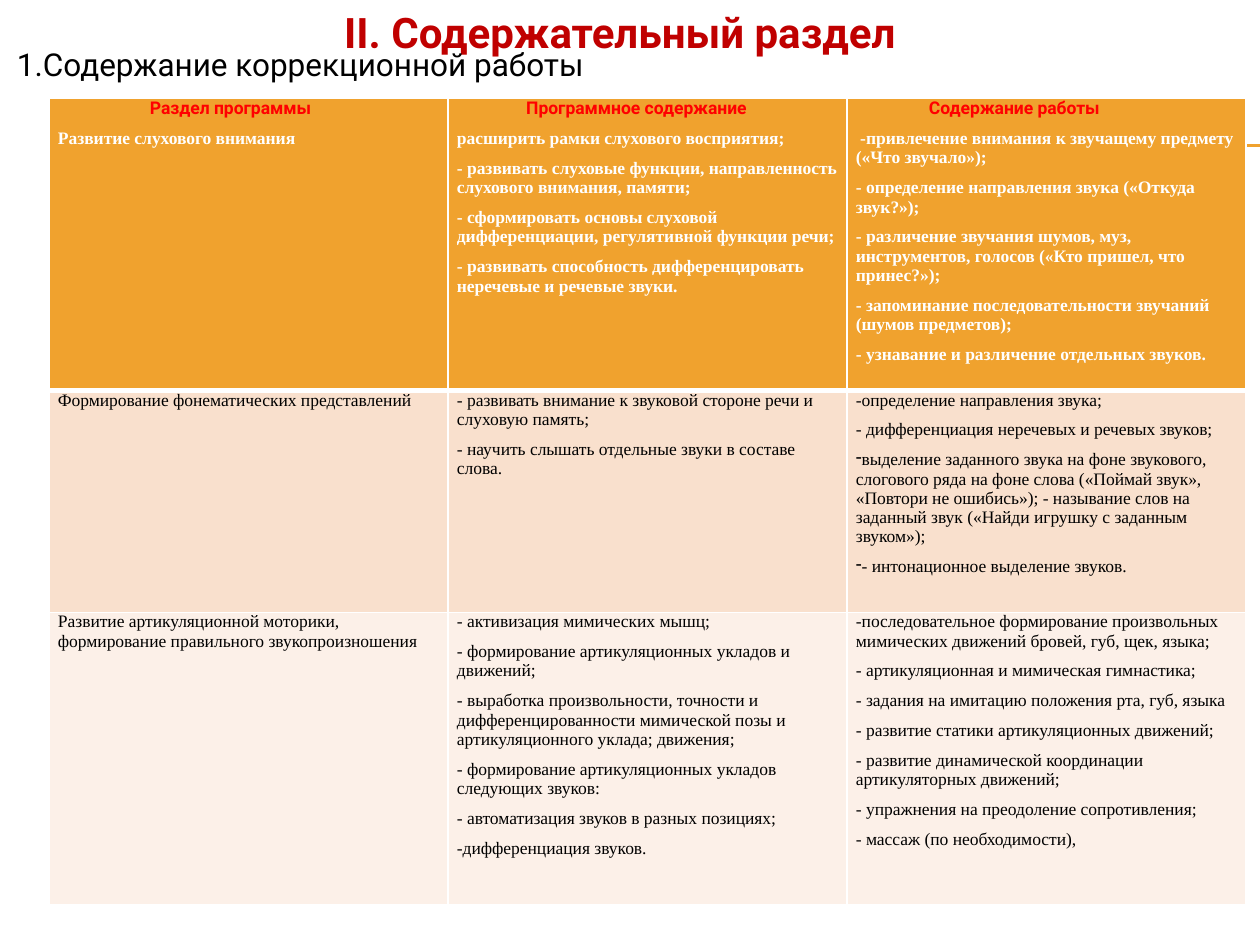
from lxml.etree import SubElement
from pptx import Presentation
from pptx.dml.color import RGBColor
from pptx.enum.text import MSO_ANCHOR, MSO_AUTO_SIZE, PP_ALIGN
from pptx.enum.shapes import MSO_CONNECTOR
from pptx.oxml.ns import qn
from pptx.util import Inches, Pt

ORANGE = RGBColor(0xF0, 0xA2, 0x2E)
PEACH = RGBColor(0xF9, 0xE0, 0xCD)
CREAM = RGBColor(0xFC, 0xF0, 0xE8)
WHITE = RGBColor(0xFF, 0xFF, 0xFF)
BLACK = RGBColor(0, 0, 0)
RED = RGBColor(0xFF, 0, 0)
DARK_RED = RGBColor(0xC0, 0, 0)
SANS, SERIF = "Roboto", "Times New Roman"

# Heading and its left indent in inches, one per column
HEADINGS = [("Раздел программы", 0.73), ("Программное содержание", 0.55),
            ("Содержание работы", 0.58)]
BULLET = "•"  # marks a paragraph that gets a dash as its list bullet

ROWS = [
    [
        ["Развитие слухового внимания"],
        ["расширить рамки слухового восприятия;",
         "- развивать слуховые функции, направленность слухового внимания, памяти;",
         "- сформировать основы слуховой дифференциации, регулятивной функции речи;",
         "- развивать способность дифференцировать неречевые и речевые звуки."],
        [" -привлечение внимания к звучащему предмету («Что звучало»);",
         "- определение направления звука («Откуда звук?»);",
         "- различение звучания шумов, муз, инструментов, голосов («Кто пришел, что принес?»);",
         "- запоминание последовательности звучаний (шумов предметов);",
         "- узнавание и различение отдельных звуков."],
    ],
    [
        ["Формирование фонематических представлений"],
        ["- развивать внимание к звуковой стороне речи и слуховую память;",
         "- научить слышать отдельные звуки в составе слова."],
        ["-определение направления звука;",
         "- дифференциация неречевых и речевых звуков;",
         BULLET + "выделение заданного звука на фоне звукового, слогового ряда на фоне слова "
         "(«Поймай звук», «Повтори не ошибись»); - называние слов на заданный звук "
         "(«Найди игрушку с заданным звуком»);",
         BULLET + "- интонационное выделение звуков."],
    ],
    [
        ["Развитие артикуляционной моторики, формирование правильного звукопроизношения"],
        ["- активизация мимических мышц;",
         "- формирование артикуляционных укладов и движений;",
         "- выработка произвольности, точности и дифференцированности мимической позы "
         "и артикуляционного уклада; движения;",
         "- формирование артикуляционных укладов следующих звуков:",
         "- автоматизация звуков в разных позициях;",
         "-дифференциация звуков."],
        ["-последовательное формирование произвольных мимических движений бровей, губ, щек, языка;",
         "- артикуляционная и мимическая гимнастика;",
         "- задания на имитацию положения рта, губ, языка",
         "- развитие статики артикуляционных движений;",
         "- развитие динамической координации артикуляторных движений;",
         "- упражнения на преодоление сопротивления;",
         "- массаж (по необходимости),"],
    ],
]
ROW_STYLES = [(2.32, ORANGE, WHITE), (1.76, PEACH, BLACK), (2.32, CREAM, BLACK)]


class SlideBuilder:
    def __init__(self, slide):
        self.s = slide

    def style(self, p, size, font, color, bold=False):
        f = p.font
        f.size, f.name, f.bold = Pt(size), font, bold
        f.color.rgb = color

    def caption(self, sp, box, text, size, color, bold=False):
        sp.left, sp.top, sp.width, sp.height = map(Inches, box)
        tf = sp.text_frame
        tf.word_wrap = True
        tf.auto_size = MSO_AUTO_SIZE.NONE
        tf.vertical_anchor = MSO_ANCHOR.TOP
        p = tf.paragraphs[0]
        p.text = text
        p.alignment = PP_ALIGN.CENTER
        self.style(p, size, SANS, color, bold)

    def title(self, box, text):
        self.caption(self.s.shapes.title, box, text, 24, DARK_RED, True)

    def subtitle(self, box, text):
        sp = self.s.shapes.add_textbox(*map(Inches, box))
        self.caption(sp, box, text, 18, BLACK)

    def rule(self, x1, x2, y):
        c = self.s.shapes.add_connector(MSO_CONNECTOR.STRAIGHT, Inches(x1), Inches(y),
                                        Inches(x2), Inches(y))
        c.line.color.rgb = ORANGE
        c.line.width = Pt(0.75)
        SubElement(c._element.spPr, qn("a:effectLst"))

    def borders(self, cell, top, bottom):
        """Draw white cell borders; must run before the cell is filled."""
        tc_pr = cell._tc.get_or_add_tcPr()
        for tag, width in (("lnL", 1), ("lnR", 1), ("lnT", top), ("lnB", bottom)):
            ln = SubElement(tc_pr, qn("a:" + tag), w=str(Pt(width)))
            fill = SubElement(ln, qn("a:solidFill"))
            SubElement(fill, qn("a:srgbClr"), val=str(WHITE))

    def paragraph(self, p, text, font, color, bold, indent=0):
        p.text = text.removeprefix(BULLET)
        p.space_after = Pt(6)
        self.style(p, 10, font, color, bold)
        p_pr = p._p.get_or_add_pPr()
        p_pr.set("marL", str(Inches(indent)))
        p_pr.set("indent", "0")
        if text.startswith(BULLET):
            bullet = p_pr.makeelement(qn("a:buChar"), {"char": "-"})
            p_pr.find(qn("a:defRPr")).addprevious(bullet)

    def cell(self, cell, texts, fill, color, heading=None, top=1):
        cell.margin_left = cell.margin_right = Inches(0.07)
        cell.margin_top = cell.margin_bottom = 0
        self.borders(cell, top, 3 if heading else 1)
        cell.fill.solid()
        cell.fill.fore_color.rgb = fill
        tf = cell.text_frame
        p = tf.paragraphs[0]
        if heading:
            text, indent = heading
            self.paragraph(p, text, SANS, RED, True, indent)
            p = tf.add_paragraph()
        for i, text in enumerate(texts):
            self.paragraph(p if i == 0 else tf.add_paragraph(), text, SERIF, color,
                           bool(heading))

    def table(self, box):
        table = self.s.shapes.add_table(len(ROWS), len(HEADINGS), *map(Inches, box)).table
        for r, (height, fill, color) in enumerate(ROW_STYLES):
            table.rows[r].height = Inches(height)
            for c, texts in enumerate(ROWS[r]):
                heading = HEADINGS[c] if r == 0 else None
                self.cell(table.cell(r, c), texts, fill, color, heading, 3 if r == 1 else 1)


def main():
    prs = Presentation()
    prs.slide_width, prs.slide_height = Inches(10), Inches(7.5)
    b = SlideBuilder(prs.slides.add_slide(prs.slide_layouts[5]))
    for y in (1.15, 1.16):
        b.rule(0.56, 10, y)
    b.table((0.39, 0.78, 9.5, 6.4))
    b.title((0.39, 0, 9.06, 0.5), "II. Содержательный раздел")
    b.subtitle((0, 0.31, 4.77, 0.4), "1.Содержание коррекционной работы")
    prs.save("out.pptx")


if __name__ == "__main__":
    main()
